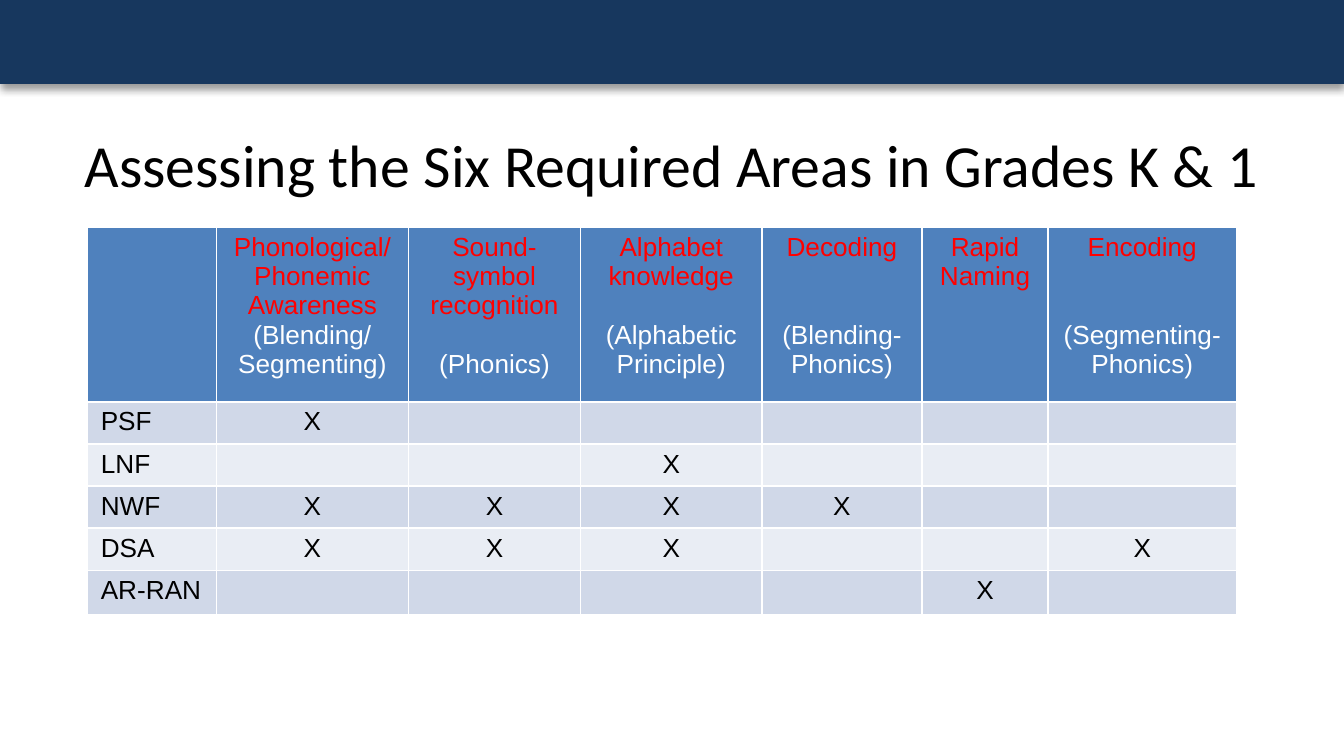
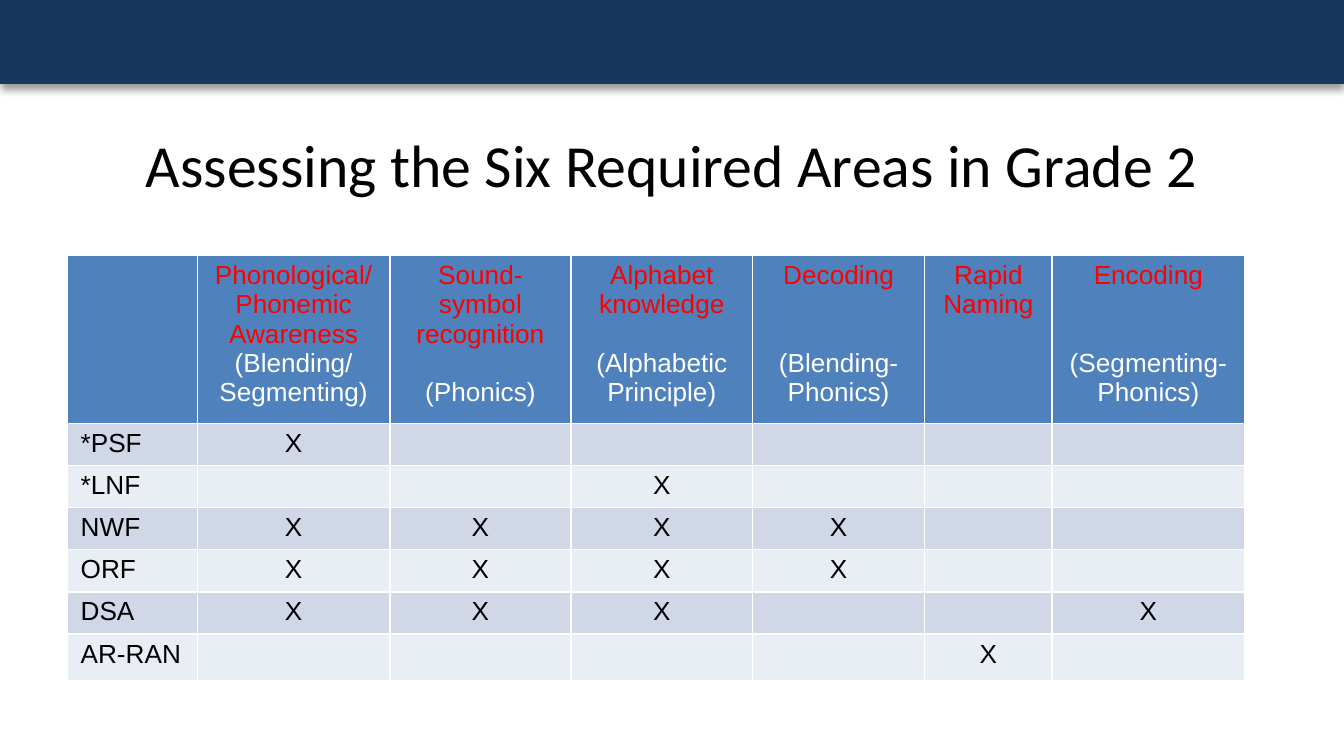
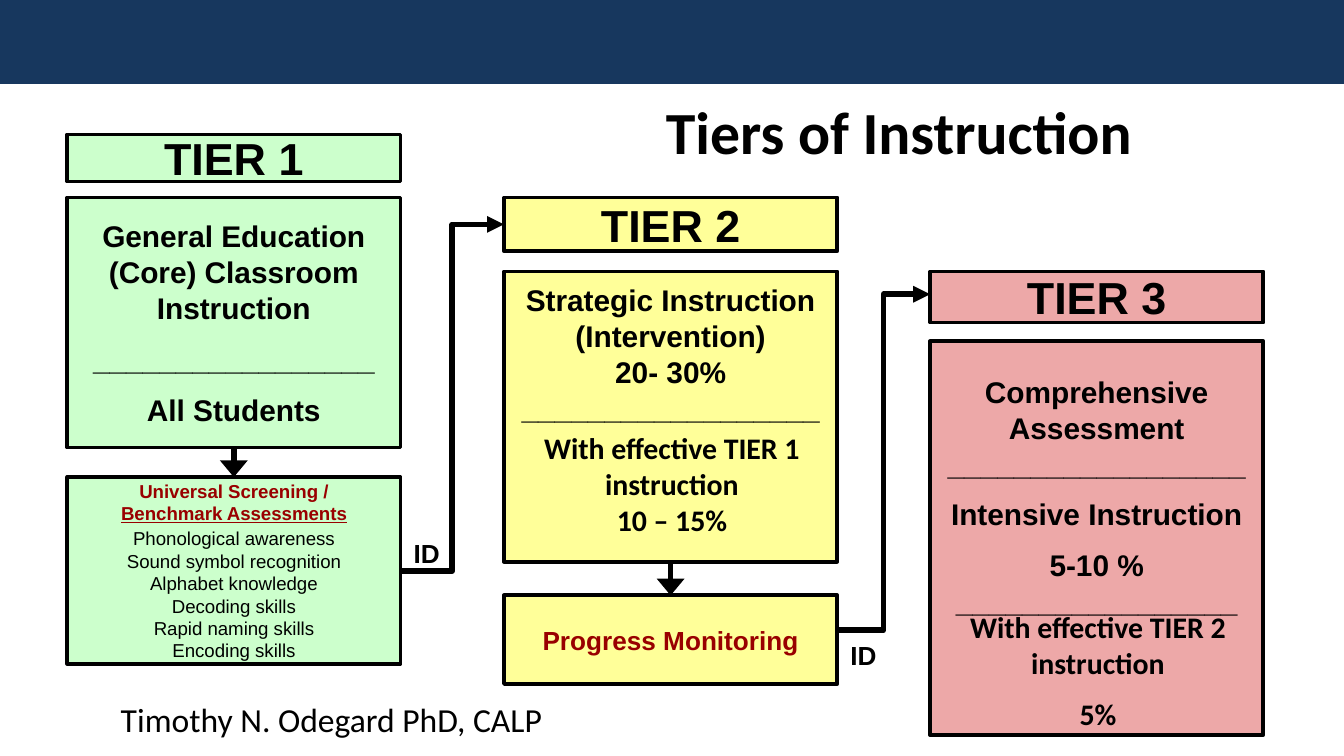
from dataclasses import dataclass

import lxml.etree
import pptx
import pptx.dml.color
import pptx.enum.shapes
import pptx.enum.text
import pptx.oxml.ns
import pptx.util

Inches = pptx.util.Inches
Pt = pptx.util.Pt
ALIGN = pptx.enum.text.PP_ALIGN
ANCHOR = pptx.enum.text.MSO_ANCHOR
CONNECTOR = pptx.enum.shapes.MSO_CONNECTOR

# Shared colours, fonts and lengths
NAVY, BLACK, WHITE = "17375E", "000000", "FFFFFF"
RED, DARK_RED = "FF0000", "990000"
HEADER_BLUE, ROW_DARK, ROW_LIGHT = "4F81BD", "D0D8E8", "E9EDF4"
GREEN, YELLOW, TIER3_RED = "CCFFCC", "FFFF99", "CC0000"
HEADING, BODY = "Calibri", "Arial"
SLIDE_WIDTH = 10
SLIDE_HEIGHT = SLIDE_WIDTH * 9 / 16
BAND_HEIGHT = SLIDE_HEIGHT / 9
TABLE_SIZE = 14
TABLE_LINE = 15.7  # height of one line of table text, in points


@dataclass
class Para:
    text: str
    size: float = 16
    color: str = BLACK
    bold: bool = True
    font: str = BODY
    before: float = 0
    underline: bool = False
    align: ALIGN = ALIGN.CENTER


@dataclass
class Box:
    left: float
    top: float
    width: float
    height: float


@dataclass
class Area:
    name: str
    detail: str = ""
    blank_lines: int = 0  # lines left open between name and detail


@dataclass
class Grid:
    title: str
    left: float
    top: float
    widths: list[float]
    header_height: float
    last_height: float
    tests: list[str]


AREAS = [
    Area("Phonological/Phonemic Awareness", "(Blending/Segmenting)"),
    Area("Sound-symbol recognition", "(Phonics)", 1),
    Area("Alphabet knowledge", "(Alphabetic Principle)", 1),
    Area("Decoding", "(Blending- Phonics)", 2),
    Area("Rapid Naming"),
    Area("Encoding", "(Segmenting-Phonics)", 2),
]

# One mark for each area a test covers, in the order of AREAS
COVERAGE = {
    "PSF": "X-----",
    "LNF": "--X---",
    "NWF": "XXXX--",
    "ORF": "XXXX--",
    "DSA": "XXX--X",
    "AR-RAN": "----X-",
}

GRIDS = [
    Grid("Assessing the Six Required Areas in Grades K & 1", 0.65, 1.69,
         [0.96, 1.43, 1.28, 1.35, 1.19, 0.94, 1.4], 1.3, 0.33,
         ["PSF", "LNF", "NWF", "DSA", "AR-RAN"]),
    Grid("Assessing the Six Required Areas in Grade 2", 0.5, 1.9,
         [0.97, 1.43, 1.35, 1.35, 1.28, 0.95, 1.43], 1.25, 0.35,
         ["*PSF", "*LNF", "NWF", "ORF", "DSA", "AR-RAN"]),
]


def rgb(color: str) -> pptx.dml.color.RGBColor:
    return pptx.dml.color.RGBColor.from_string(color)


def sub(parent, tag: str, **attrs: str):
    """Append a DrawingML element to parent."""
    return lxml.etree.SubElement(parent, pptx.oxml.ns.qn(tag), **attrs)


def write(tf, paras: list[Para]) -> None:
    tf.word_wrap = True
    for i, para in enumerate(paras):
        p = tf.paragraphs[0] if i == 0 else tf.add_paragraph()
        p.text = para.text
        p.alignment = para.align
        if para.before:
            p.space_before = Pt(para.before)
        for r in p.runs:
            r.font.name = para.font
            r.font.size = Pt(para.size)
            r.font.bold = para.bold
            r.font.underline = para.underline
            r.font.color.rgb = rgb(para.color)


def add_rect(s, box: Box, fill: str, line: bool = True, alpha: int = 100):
    sp = s.shapes.add_shape(
        pptx.enum.shapes.MSO_SHAPE.RECTANGLE, Inches(box.left), Inches(box.top),
        Inches(box.width), Inches(box.height))
    sp.shadow.inherit = False
    sp.fill.solid()
    sp.fill.fore_color.rgb = rgb(fill)
    if alpha < 100:
        clr = sp.fill._xPr.find(".//" + pptx.oxml.ns.qn("a:srgbClr"))
        sub(clr, "a:alpha", val=str(alpha * 1000))
    if line:
        sp.line.color.rgb = rgb(BLACK)
        sp.line.width = Pt(2)
    else:
        sp.line.fill.background()
    return sp


def add_panel(s, box: Box, fill: str, paras: list[Para], alpha: int = 100):
    sp = add_rect(s, box, fill, alpha=alpha)
    sp.text_frame.vertical_anchor = ANCHOR.MIDDLE
    write(sp.text_frame, paras)
    return sp


def add_text(s, box: Box, paras: list[Para], anchor: ANCHOR = ANCHOR.TOP) -> None:
    sp = s.shapes.add_textbox(Inches(box.left), Inches(box.top),
                              Inches(box.width), Inches(box.height))
    sp.text_frame.vertical_anchor = anchor
    write(sp.text_frame, paras)


def add_title(s, text: str, box: Box, bold: bool = False) -> None:
    add_text(s, box, [Para(text, 32, bold=bold, font=HEADING)], ANCHOR.MIDDLE)


def add_band(s, shadow: bool) -> None:
    sp = add_rect(s, Box(0, 0, SLIDE_WIDTH, BAND_HEIGHT), NAVY, line=False)
    if shadow:
        effects = sp._element.spPr.find(pptx.oxml.ns.qn("a:effectLst"))
        outer = sub(effects, "a:outerShdw", blurRad=str(Pt(4)), dist=str(Pt(3)),
                    dir="5400000", rotWithShape="0")
        sub(sub(outer, "a:srgbClr", val=BLACK), "a:alpha", val="40000")


def add_arrow(s, kind: CONNECTOR, start: tuple[float, float],
              end: tuple[float, float], head_width: str = "med") -> None:
    cx = s.shapes.add_connector(kind, *(Inches(v) for v in start + end))
    cx.line.color.rgb = rgb(BLACK)
    cx.line.width = Pt(3)
    sub(cx.line._get_or_add_ln(), "a:tailEnd", type="triangle", w=head_width)
    sub(cx._element.spPr, "a:effectLst")


# Assessment tables
def fill_cell(cell, fill: str, paras: list[Para]) -> None:
    cell.margin_left = cell.margin_right = Inches(0.1)
    cell.margin_top = cell.margin_bottom = Inches(0.04)
    tcPr = cell._tc.get_or_add_tcPr()
    for side in ("L", "R", "T", "B"):
        ln = sub(tcPr, f"a:ln{side}", w=str(Pt(1)))
        sub(sub(ln, "a:solidFill"), "a:srgbClr", val=WHITE)
    cell.fill.solid()
    cell.fill.fore_color.rgb = rgb(fill)
    if paras:
        write(cell.text_frame, paras)
    else:  # keeps an empty cell from stretching its row
        sub(cell.text_frame.paragraphs[0]._p, "a:endParaRPr",
            sz=str(TABLE_SIZE * 100))


def table_para(text: str, color: str = BLACK, **options) -> Para:
    return Para(text, TABLE_SIZE, color, bold=False, **options)


def header_paras(area: Area) -> list[Para]:
    paras = [table_para(area.name, RED)]
    if area.detail:
        paras.append(table_para(area.detail, WHITE,
                                before=area.blank_lines * TABLE_LINE))
    return paras


def build_grid_slide(s, grid: Grid) -> None:
    add_band(s, shadow=True)
    add_title(s, grid.title, Box(0.5, 0.75, 9, 0.94))

    heights = [grid.header_height] + [0.31] * (len(grid.tests) - 1)
    heights.append(grid.last_height)
    table = s.shapes.add_table(
        len(heights), len(grid.widths), Inches(grid.left), Inches(grid.top),
        Inches(sum(grid.widths)), Inches(sum(heights))).table
    for column, width in zip(table.columns, grid.widths):
        column.width = Inches(width)
    for row, height in zip(table.rows, heights):
        row.height = Inches(height)

    fill_cell(table.cell(0, 0), HEADER_BLUE, [])
    for c, area in enumerate(AREAS, 1):
        fill_cell(table.cell(0, c), HEADER_BLUE, header_paras(area))
    for r, test in enumerate(grid.tests, 1):
        fill = ROW_DARK if r % 2 else ROW_LIGHT
        fill_cell(table.cell(r, 0), fill, [table_para(test, align=ALIGN.LEFT)])
        for c, mark in enumerate(COVERAGE[test.lstrip("*")], 1):
            fill_cell(table.cell(r, c), fill,
                      [table_para(mark)] if mark == "X" else [])


# Tier diagram
def build_tiers_slide(s) -> None:
    width = 2.48
    tier1, tier2, tier3 = 0.5, 3.75, 6.92
    half_line = 8

    add_band(s, shadow=False)

    # Tier headings
    for number, left, top, height, fill, alpha in (
            (1, tier1, 1, 0.35, GREEN, 100),
            (2, tier2, 1.47, 0.4, YELLOW, 100),
            (3, tier3, 2.02, 0.38, TIER3_RED, 34)):
        add_panel(s, Box(left, top, width, height), fill,
                  [Para(f"TIER {number}", 24)], alpha)

    # Tier 1
    add_panel(s, Box(tier1, 1.47, width, 1.86), GREEN, [
        Para("General Education (Core) Classroom Instruction"),
        Para("_" * 17, before=half_line),
        Para("All Students", before=half_line)])
    skills = ["Phonological awareness", "Sound symbol recognition",
              "Alphabet knowledge", "Decoding skills", "Rapid naming skills",
              "Encoding skills"]
    add_panel(s, Box(tier1, 3.55, width, 1.39), GREEN, [
        Para("Universal Screening /", 10, DARK_RED),
        Para("Benchmark Assessments", 10, DARK_RED, underline=True),
        Para("\n".join(skills), 10, bold=False, before=1.5)])

    # Tier 2
    add_rect(s, Box(tier2, 2.02, width, 2.16), YELLOW)
    add_text(s, Box(tier2, 2.05, width, 1.45), [
        Para(line) for line in
        ("Strategic Instruction", "(Intervention)", "20- 30%", "_" * 18)])
    add_text(s, Box(tier2, 3.15, 2.5, 0.91), [
        Para("With effective TIER 1 instruction", font=HEADING),
        Para("10 – 15%", font=HEADING)])
    add_panel(s, Box(tier2, 4.43, width, 0.66), YELLOW,
              [Para("Progress Monitoring", 14, DARK_RED)])

    # Tier 3
    sp = add_panel(s, Box(tier3, 2.54, width, 2.93), TIER3_RED, [
        Para("Comprehensive Assessment\n" + "_" * 18),
        Para("Intensive Instruction", before=half_line),
        Para("5-10 % " + "_" * 17, before=half_line)], alpha=34)
    sp.text_frame.vertical_anchor = ANCHOR.TOP
    sp.text_frame.margin_top = Inches(0.24)
    add_text(s, Box(tier3, 4.48, 2.5, 1.04), [
        Para("With effective TIER 2 instruction", font=HEADING),
        Para("5%", font=HEADING, before=half_line)])

    # Arrows within and between tiers
    for left, top, bottom in ((tier1, 3.33, 3.55), (tier2, 4.17, 4.43)):
        x = left + width / 2
        add_arrow(s, CONNECTOR.STRAIGHT, (x, top), (x, bottom), "lg")
    for left, start_y, next_left, end_y, label_y in (
            (tier1, 4.25, tier2, 1.67, 3.95),
            (tier2, 4.69, tier3, 2.19, 4.71)):
        right = left + width
        add_arrow(s, CONNECTOR.ELBOW, (right, start_y), (next_left, end_y))
        add_text(s, Box(right, label_y, 0.5, 0.34),
                 [Para("ID", 14, align=ALIGN.LEFT)])

    add_title(s, "Tiers of Instruction", Box(3.69, 0.5, 6, 0.94), bold=True)
    add_text(s, Box(0.8, 5.15, 3.58, 0.4), [
        Para("Timothy N. Odegard PhD, CALP", 18, bold=False, font=HEADING,
             align=ALIGN.LEFT)])


def main() -> None:
    prs = pptx.Presentation()
    prs.slide_width = Inches(SLIDE_WIDTH)
    prs.slide_height = Inches(SLIDE_HEIGHT)
    blank = prs.slide_layouts[6]
    for grid in GRIDS:
        build_grid_slide(prs.slides.add_slide(blank), grid)
    build_tiers_slide(prs.slides.add_slide(blank))
    prs.save("out.pptx")


if __name__ == "__main__":
    main()
